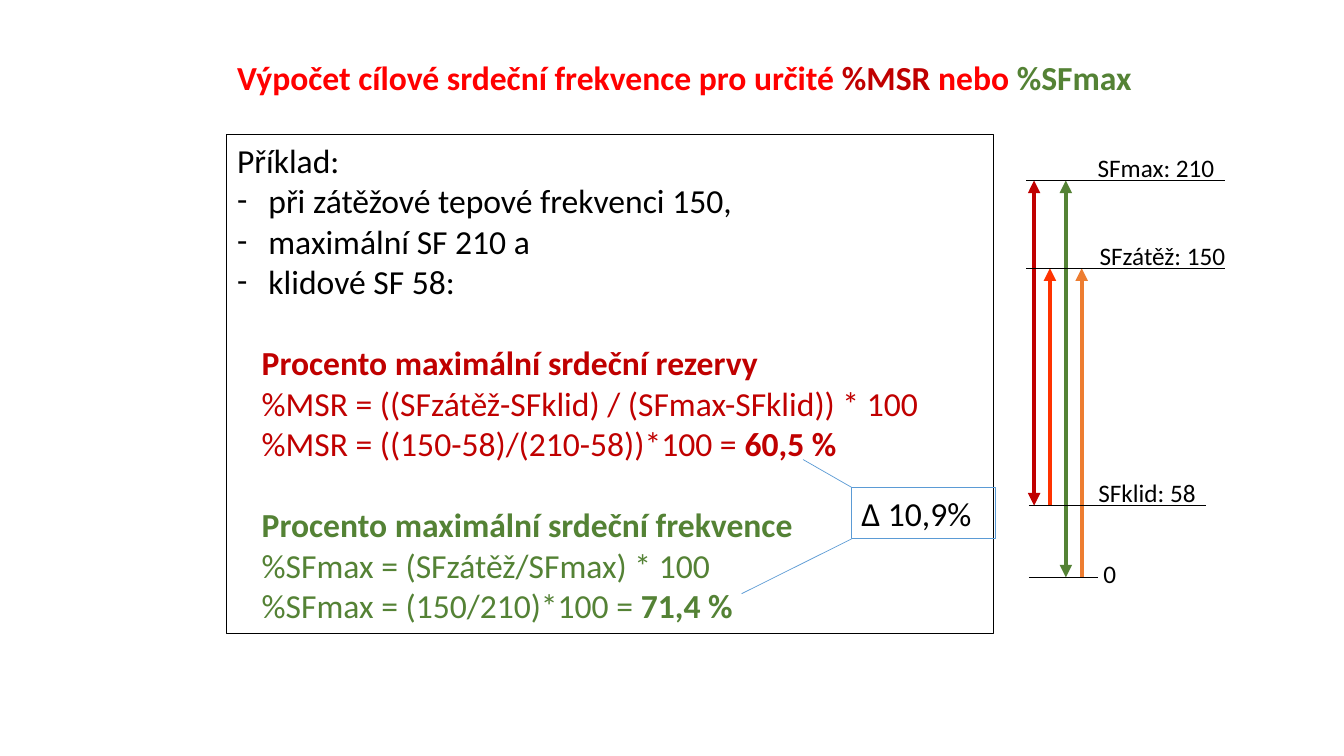
import pptx
import pptx.util
import pptx.dml.color
import pptx.enum.shapes
import pptx.enum.text
import pptx.oxml.ns
from lxml import etree
from dataclasses import dataclass

Cm, Pt = pptx.util.Cm, pptx.util.Pt
RGB = pptx.dml.color.RGBColor.from_string
qn = pptx.oxml.ns.qn
LEFT = pptx.enum.text.PP_ALIGN.LEFT


@dataclass
class Theme:
    font: str = "Calibri"
    big: int = 24
    small: int = 18
    black: str = "000000"
    red: str = "FF0000"
    dark: str = "C00000"
    green: str = "548235"
    bright: str = "FF3300"
    orange: str = "ED7D31"
    blue: str = "5B9BD5"


theme = Theme()


def write(para, parts, size):
    """Fill a paragraph with (text, colour, bold) runs."""
    para.alignment = LEFT
    para.space_before = Pt(0)
    for text, color, bold in parts:
        run = para.add_run()
        run.text = text
        run.font.name = theme.font
        run.font.size = Pt(size)
        run.font.bold = bold
        run.font.color.rgb = RGB(color)


def draw(start, end, color, width, heads=()):
    """Draw a straight line; heads names the ends that get an arrowhead."""
    line = slide.shapes.add_connector(
        pptx.enum.shapes.MSO_CONNECTOR.STRAIGHT,
        *[Cm(v) for v in (*start, *end)])
    line.line.color.rgb = RGB(color)
    line.line.width = Pt(width)
    props = line._element.spPr
    for head in heads:
        etree.SubElement(props.find(qn("a:ln")), qn("a:" + head), type="triangle")
    etree.SubElement(props, qn("a:effectLst"))


deck = pptx.Presentation()
deck.slide_width, deck.slide_height = Cm(33.87), Cm(19.05)
slide = deck.slides.add_slide(deck.slide_layouts[1])
title, body = slide.placeholders

# Title
title.left, title.top, title.width, title.height = Cm(5.72), Cm(1.3), Cm(23.4), Cm(1.27)
title.text_frame.auto_size = pptx.enum.text.MSO_AUTO_SIZE.NONE
write(title.text_frame.paragraphs[0], [
    ("Výpočet cílové srdeční frekvence pro určité ", theme.red, True),
    ("%MSR ", theme.dark, True),
    ("nebo ", theme.red, True),
    ("%SFmax", theme.green, True)], theme.big)

# Worked example: (kind, runs)
body.left, body.top, body.width, body.height = Cm(5.72), Cm(3.4), Cm(19.33), Cm(12.57)
body.line.color.rgb = RGB(theme.black)
body.line.width = Pt(0.75)
frame = body.text_frame
frame.auto_size = pptx.enum.text.MSO_AUTO_SIZE.NONE
rows = [
    ("plain", [("Příklad:", theme.black, False)]),
    ("dash", [("při zátěžové tepové frekvenci 150,", theme.black, False)]),
    ("dash", [("maximální SF 210 a", theme.black, False)]),
    ("dash", [("klidové SF 58:", theme.black, False)]),
    ("head", [("Procento maximální srdeční rezervy", theme.dark, True)]),
    ("math", [("%MSR = ((SFzátěž-SFklid) / (SFmax-SFklid)) * 100", theme.dark, False)]),
    ("math", [("%MSR = ((150-58)/(210-58))*100 = ", theme.dark, False),
              ("60,5 %", theme.dark, True)]),
    ("head", [("Procento maximální srdeční frekvence", theme.green, True)]),
    ("math", [("%SFmax = (SFzátěž/SFmax) * 100", theme.green, False)]),
    ("math", [("%SFmax = (150/210)*100 = ", theme.green, False),
              ("71,4 %", theme.green, True)]),
]
margin = {"plain": 0, "dash": 0.79, "head": 0.62, "math": 0.62}
for i, (kind, parts) in enumerate(rows):
    para = frame.add_paragraph() if i else frame.paragraphs[0]
    write(para, parts, theme.big)
    if kind == "head":
        para.space_before = Pt(29.3)
    props = para._p.get_or_add_pPr()
    props.set("marL", str(Cm(margin[kind])))
    if kind == "dash":
        props.set("indent", str(-Cm(margin[kind])))
        etree.SubElement(props, qn("a:buFont"), typeface=theme.font)
        etree.SubElement(props, qn("a:buChar"), char="-")
    else:
        props.set("indent", "0")
        etree.SubElement(props, qn("a:buNone"))

# Heart rate scale
top, load, rest, zero = 4.55, 6.76, 12.74, 14.55
both = ("headEnd", "tailEnd")
arrows = [
    (theme.dark, rest, top, both),
    (theme.bright, rest, load, ("tailEnd",)),
    (theme.green, zero, top, both),
    (theme.orange, zero, load, ("tailEnd",)),
]
for i, (color, low, high, heads) in enumerate(arrows):
    x = 26.06 + 0.4 * i
    draw((x, low), (x, high), color, 3, heads)

levels = [  # text, height, line start, line end, label left, label rise
    ("SFmax: 210", top, 25.86, 30.86, 27.41, 0.84),
    ("SFzátěž: 150", load, 25.86, 30.86, 27.46, 0.84),
    ("SFklid: 58", rest, 25.93, 30.38, 27.43, 0.84),
    ("0", zero, 25.93, 27.66, 27.56, 0.61),
]
for text, y, start, end, left, rise in levels:
    draw((start, y), (end, y), theme.black, 0.75)
    label = slide.shapes.add_textbox(Cm(left), Cm(y - rise), Cm(4.2), Cm(1.02))
    label.text_frame.word_wrap = True
    write(label.text_frame.paragraphs[0], [(text, theme.black, False)], theme.small)

# Difference of the two results
delta = slide.shapes.add_shape(pptx.enum.shapes.MSO_SHAPE.RECTANGLE,
                               Cm(21.46), Cm(12.29), Cm(3.63), Cm(1.28))
delta.shadow.inherit = False
delta.fill.background()
delta.line.color.rgb = RGB(theme.blue)
delta.line.width = Pt(0.75)
write(delta.text_frame.paragraphs[0], [("∆ 10,9%", theme.black, False)], theme.big)
draw((20.24, 11.58), (21.46, 12.28), theme.blue, 0.5)
draw((18.69, 14.96), (21.46, 13.58), theme.blue, 0.5)

deck.save("out.pptx")
